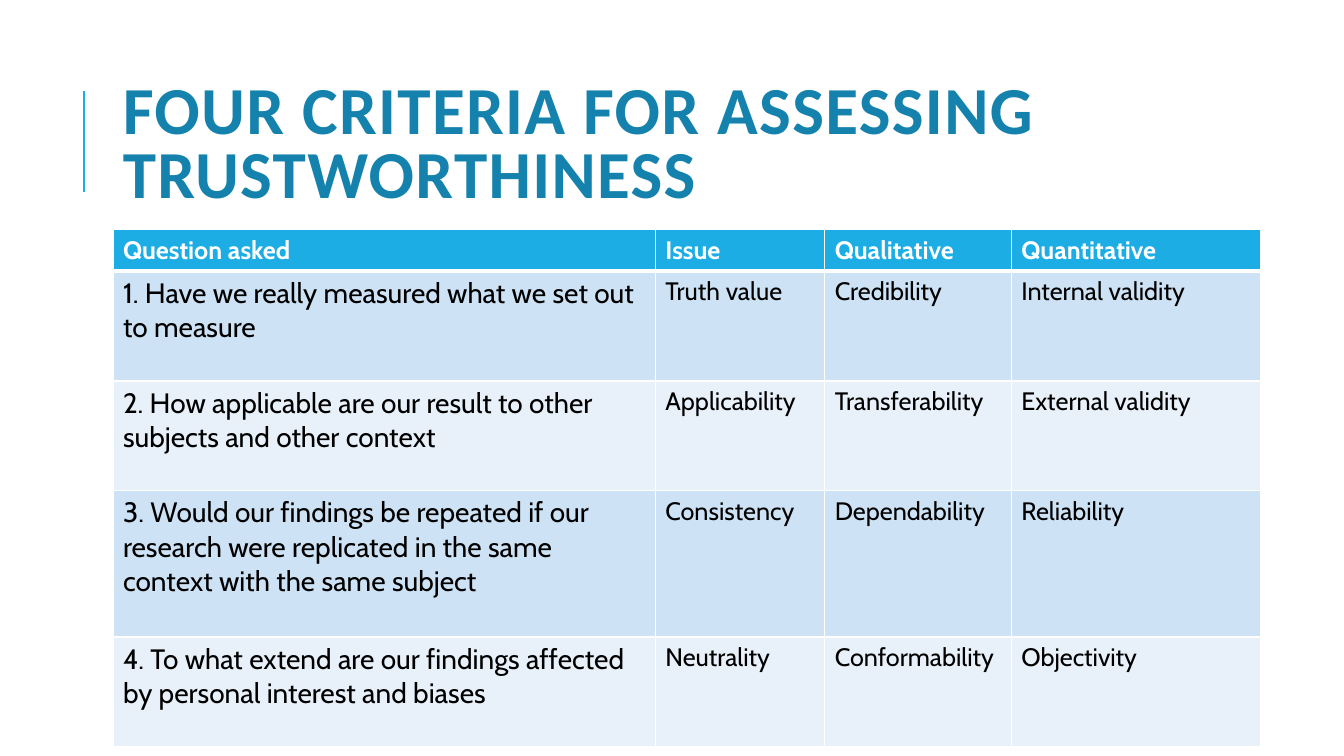
from lxml import etree
from pptx import Presentation
from pptx.dml.color import RGBColor
from pptx.enum.shapes import MSO_CONNECTOR
from pptx.enum.text import MSO_ANCHOR
from pptx.oxml.ns import qn
from pptx.util import Inches, Pt

STRAIGHT = MSO_CONNECTOR.STRAIGHT
MIDDLE = MSO_ANCHOR.MIDDLE

WHITE = RGBColor(0xFF, 0xFF, 0xFF)
BLACK = RGBColor(0x00, 0x00, 0x00)
SKY = RGBColor(0x1C, 0xAD, 0xE4)
TEAL = RGBColor(0x14, 0x82, 0xAC)
BAND_DARK = RGBColor(0xCD, 0xE3, 0xF5)
BAND_LIGHT = RGBColor(0xE8, 0xF1, 0xFA)

TITLE = "FOUR CRITERIA FOR ASSESSING TRUSTWORTHINESS"
CRITERIA = [
    ("Question asked", "Issue", "Qualitative", "Quantitative"),
    ("1. Have we really measured what we set out to measure",
     "Truth value", "Credibility", "Internal validity"),
    ("2. How applicable are our result to other subjects and other context",
     "Applicability", "Transferability", "External validity"),
    ("3. Would our findings be repeated if our research were replicated "
     "in the same context with the same subject",
     "Consistency", "Dependability", "Reliability"),
    ("4. To what extend are our findings affected by personal interest and biases",
     "Neutrality", "Conformability", "Objectivity"),
]
COLUMN_WIDTHS = [5.38, 1.68, 1.85, 2.47]
ROW_HEIGHTS = [0.41, 1.09, 1.09, 1.45, 1.09]


def write(frame, text, font="Cabin", size=18, color=BLACK, bold=False,
          line_spacing=None, tracking=None):
    """Fill a text frame; tracking is the letter spacing in points."""
    paragraph = frame.paragraphs[0]
    paragraph.line_spacing = line_spacing
    run = paragraph.add_run()
    run.text = text
    run.font.name = font
    run.font.size = Pt(size)
    run.font.color.rgb = color
    run.font.bold = bold
    if tracking is not None:
        run.font._element.set("spc", str(round(tracking * 100)))


def set_borders(cell, top, bottom):
    """Draw white borders; top and bottom are widths in points."""
    properties = cell._tc.get_or_add_tcPr()
    widths = {"a:lnL": 1, "a:lnR": 1, "a:lnT": top, "a:lnB": bottom}
    for position, (tag, width) in enumerate(widths.items()):
        border = etree.Element(qn(tag), w=str(Pt(width)))
        solid = etree.SubElement(border, qn("a:solidFill"))
        etree.SubElement(solid, qn("a:srgbClr"), val=str(WHITE))
        properties.insert(position, border)


def add_title(slide, left, top, width, height):
    rule_x = Inches(left - 0.29)
    rule = slide.shapes.add_connector(
        STRAIGHT, rule_x, Inches(top + 1.26), rule_x, Inches(top + 0.26))
    rule.line.color.rgb = SKY
    rule.line.width = Pt(1.5)
    etree.SubElement(rule._element.spPr, qn("a:effectLst"))

    title = slide.shapes.add_textbox(
        Inches(left), Inches(top), Inches(width), Inches(height))
    title.text_frame.word_wrap = True
    title.text_frame.vertical_anchor = MIDDLE
    write(title.text_frame, TITLE, font="Calibri", size=48, color=TEAL,
          bold=True, line_spacing=0.8, tracking=1)


def add_criteria_table(slide, left, top):
    table = slide.shapes.add_table(
        len(CRITERIA), len(COLUMN_WIDTHS), Inches(left), Inches(top),
        Inches(sum(COLUMN_WIDTHS)), Inches(sum(ROW_HEIGHTS))).table
    for column, width in zip(table.columns, COLUMN_WIDTHS):
        column.width = Inches(width)
    for row, height in zip(table.rows, ROW_HEIGHTS):
        row.height = Inches(height)

    for r, criterion in enumerate(CRITERIA):
        header = r == 0
        band = SKY if header else BAND_DARK if r % 2 else BAND_LIGHT
        for c, text in enumerate(criterion):
            cell = table.cell(r, c)
            cell.fill.solid()
            cell.fill.fore_color.rgb = band
            set_borders(cell, top=3 if r == 1 else 1, bottom=3 if header else 1)
            write(cell.text_frame, text, bold=header,
                  size=20 if c == 0 and not header else 18,
                  color=WHITE if header else BLACK)


def main():
    deck = Presentation()
    deck.slide_width = Inches(13.33)
    deck.slide_height = Inches(7.5)
    slide = deck.slides.add_slide(deck.slide_layouts[6])
    add_title(slide, 1.12, 0.64, 10.63, 1.64)
    add_criteria_table(slide, 1.12, 2.28)
    deck.save("out.pptx")


if __name__ == "__main__":
    main()
